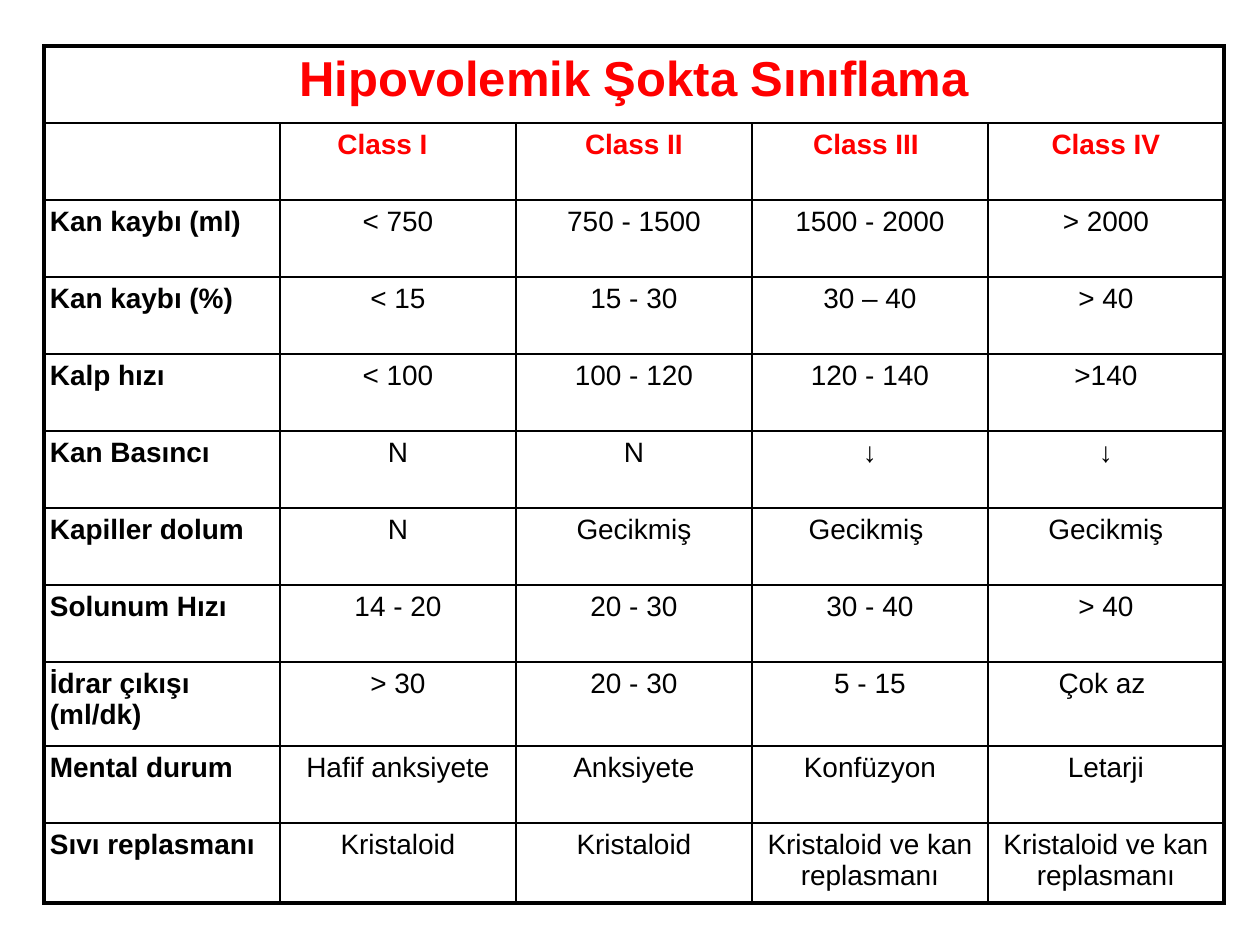
from dataclasses import dataclass

from lxml import etree
from pptx import Presentation
from pptx import util as u
from pptx.dml.color import RGBColor
from pptx.enum import text
from pptx.oxml.ns import qn

PX = 914400 / 126


@dataclass(frozen=True)
class Theme:
    font: str = "Arial"
    accent: str = "FF0000"
    ink: str = "000000"
    title_size: int = 28
    body_size: int = 16
    outer_line: float = 2.25
    inner_line: float = 1


THEME = Theme()
LEFT, TOP = 44, 46
COL_WIDTH = 236
ROW_HEIGHTS = [77] * 8 + [84, 77, 80]
INSET = 6
CLASS_I_INDENT = 37

TITLE = "Hipovolemik Şokta Sınıflama"
ROWS = [
    ["", "Class I", "Class II", "Class III ", "Class IV"],
    ["Kan kaybı (ml)", "< 750", "750 - 1500", "1500 - 2000", "> 2000"],
    ["Kan kaybı (%)", "< 15", "15 - 30", "30 – 40", "> 40"],
    ["Kalp hızı", "< 100", "100 - 120", "120 - 140", ">140"],
    ["Kan Basıncı", "N", "N", "↓", "↓"],
    ["Kapiller dolum", "N", "Gecikmiş", "Gecikmiş ", "Gecikmiş"],
    ["Solunum Hızı", "14 - 20", "20 - 30", "30 - 40", "> 40"],
    ["İdrar çıkışı (ml/dk)", "> 30", "20 - 30", "5 - 15", "Çok az "],
    ["Mental durum", "Hafif anksiyete", "Anksiyete", "Konfüzyon", "Letarji"],
    ["Sıvı replasmanı", "Kristaloid", "Kristaloid",
     "Kristaloid ve kan replasmanı", "Kristaloid ve kan replasmanı"],
]


def px(n):
    return u.Emu(round(n * PX))


def set_attrs(obj, values):
    for name, value in values.items():
        setattr(obj, name, value)


def add_borders(cell, outer):
    """Rule all four sides; outer maps each side to whether it is on the table's edge."""
    tc_pr = cell._tc.get_or_add_tcPr()
    for side, is_outer in outer.items():
        width = THEME.outer_line if is_outer else THEME.inner_line
        ln = etree.SubElement(tc_pr, qn(f"a:ln{side}"), w=str(u.Pt(width)))
        fill = etree.SubElement(ln, qn("a:solidFill"))
        etree.SubElement(fill, qn("a:srgbClr"), val=THEME.ink)


def format_cell(cell, outer):
    set_attrs(cell, {f"margin_{side}": px(INSET)
                     for side in ("left", "right", "top", "bottom")})
    add_borders(cell, outer)
    cell.fill.background()


def write_cell(cell, wording, size, color, bold, align):
    p = cell.text_frame.paragraphs[0]
    p.alignment = align
    r = p.add_run()
    r.text = wording
    set_attrs(r.font, {"name": THEME.font, "size": u.Pt(size), "bold": bold})
    r.font.color.rgb = RGBColor.from_string(color)


def add_class_table(slide):
    n_rows, n_cols = len(ROW_HEIGHTS), len(ROWS[0])
    frame = slide.shapes.add_table(n_rows, n_cols, px(LEFT), px(TOP),
                                   px(COL_WIDTH * n_cols), px(sum(ROW_HEIGHTS)))
    table = frame.table
    set_attrs(table, {"first_row": False, "horz_banding": False})
    for col in table.columns:
        col.width = px(COL_WIDTH)
    for row, height in zip(table.rows, ROW_HEIGHTS):
        row.height = px(height)

    title = table.cell(0, 0)
    title.merge(table.cell(0, n_cols - 1))
    format_cell(title, {"L": True, "R": True, "T": True, "B": False})
    write_cell(title, TITLE, THEME.title_size, THEME.accent, True,
               text.PP_ALIGN.CENTER)

    for i, values in enumerate(ROWS, start=1):
        for j, wording in enumerate(values):
            cell = table.cell(i, j)
            format_cell(cell, {"L": j == 0, "R": j == n_cols - 1,
                               "T": False, "B": i == n_rows - 1})
            if wording:
                write_cell(cell, wording, THEME.body_size,
                           THEME.accent if i == 1 else THEME.ink,
                           i == 1 or j == 0,
                           text.PP_ALIGN.CENTER if j else text.PP_ALIGN.LEFT)
    table.cell(1, 1).margin_right = px(CLASS_I_INDENT)


def main():
    prs = Presentation()
    set_attrs(prs, {"slide_width": px(1260), "slide_height": px(945)})
    slide = prs.slides.add_slide(prs.slide_layouts[6])
    add_class_table(slide)
    prs.save("out.pptx")


if __name__ == "__main__":
    main()
